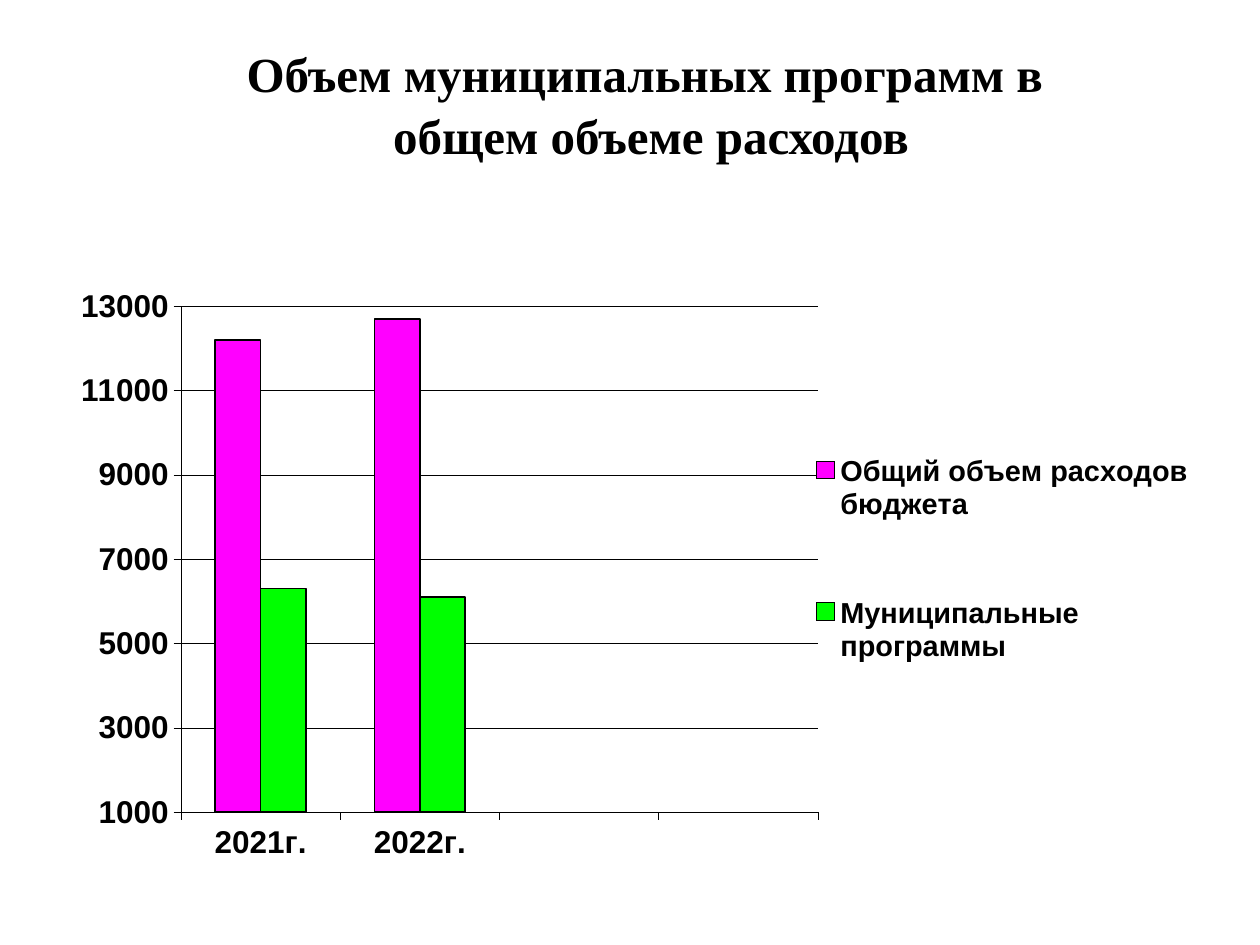
from dataclasses import dataclass

import pptx
import pptx.chart.data
import pptx.dml.color
import pptx.enum.chart
import pptx.enum.text
import pptx.oxml
import pptx.util
from pptx.util import Pt


@dataclass(frozen=True)
class Theme:
    ink: str = "000000"
    heading_font: str = "Times New Roman"
    chart_font: str = "Arial"
    heading_size: float = 28
    axis_size: float = 18
    legend_size: float = 16.5
    hairline: float = 0.25
    outline: float = 1


@dataclass(frozen=True)
class Box:
    left: float
    top: float
    width: float
    height: float


@dataclass(frozen=True)
class Expense:
    name: str
    values: tuple
    color: str


THEME = Theme()
HEADING = ("Объем муниципальных программ в ", "общем объеме расходов")
YEARS = ("2021г.", "2022г.", "", "")
EXPENSES = (
    Expense("Общий объем расходов бюджета", (12200, 12700, None, None), "FF00FF"),
    Expense("Муниципальные программы", (6300, 6100, None, None), "00FF00"),
)
HEADING_BOX = Box(48, 18, 648, 90)
CHART_BOX = Box(46, 157.5, 638.5, 348.5)
# Fractions of the chart area
PLOT_AREA = Box(0.09, 0.05, 0.57, 0.83)
LEGEND_AREA = Box(0.65, 0.17, 0.35, 0.59)


def rgb(color: str) -> pptx.dml.color.RGBColor:
    return pptx.dml.color.RGBColor.from_string(color)


def style_font(font, name: str, size: float) -> None:
    font.name, font.size, font.bold = name, Pt(size), True
    font.color.rgb = rgb(THEME.ink)


def style_line(line, width: float) -> None:
    line.color.rgb = rgb(THEME.ink)
    line.width = Pt(width)


def set_layout(layout, area: Box, inner: bool = False) -> None:
    """Fill a c:layout element with a manual position."""
    def add(parent, tag: str, value=None):
        child = pptx.oxml.xmlchemy.OxmlElement(f"c:{tag}")
        if value is not None:
            child.set("val", str(value))
        parent.append(child)
        return child

    for old in list(layout):
        layout.remove(old)
    manual = add(layout, "manualLayout")
    if inner:
        add(manual, "layoutTarget", "inner")
    for tag, value in (("xMode", "edge"), ("yMode", "edge"),
                       ("x", area.left), ("y", area.top),
                       ("w", area.width), ("h", area.height)):
        add(manual, tag, value)


def add_heading(slide, lines: tuple, box: Box) -> None:
    heading = slide.shapes.add_textbox(
        Pt(box.left), Pt(box.top), Pt(box.width), Pt(box.height)).text_frame
    heading.word_wrap = True
    heading.margin_top = Pt(7)
    heading.text = "\n".join(lines)
    for line in heading.paragraphs:
        line.alignment = pptx.enum.text.PP_ALIGN.CENTER
        line.space_after = Pt(1.5)
        style_font(line.font, THEME.heading_font, THEME.heading_size)


def style_axis(axis) -> None:
    style_font(axis.tick_labels.font, THEME.chart_font, THEME.axis_size)
    style_line(axis.format.line, THEME.hairline)
    axis.major_tick_mark = pptx.enum.chart.XL_TICK_MARK.OUTSIDE
    axis.tick_label_position = pptx.enum.chart.XL_TICK_LABEL_POSITION.LOW


def add_expense_chart(slide, box: Box) -> None:
    data = pptx.chart.data.CategoryChartData(number_format="General")
    data.categories = YEARS
    for expense in EXPENSES:
        data.add_series(expense.name, expense.values)
    chart = slide.shapes.add_chart(
        pptx.enum.chart.XL_CHART_TYPE.COLUMN_CLUSTERED,
        Pt(box.left), Pt(box.top), Pt(box.width), Pt(box.height), data).chart
    chart.has_title = False
    style_font(chart.font, THEME.chart_font, THEME.axis_size)

    # Columns
    columns = chart.plots[0]
    columns.vary_by_categories = False
    columns.gap_width, columns.overlap = 150, 0
    for series, expense in zip(columns.series, EXPENSES):
        series.format.fill.solid()
        series.format.fill.fore_color.rgb = rgb(expense.color)
        style_line(series.format.line, THEME.outline)

    # Axes
    for axis in (chart.category_axis, chart.value_axis):
        style_axis(axis)
    amounts = chart.value_axis
    amounts.minimum_scale, amounts.maximum_scale = 1000, 13000
    amounts.major_unit = 2000
    amounts.has_major_gridlines = True
    style_line(amounts.major_gridlines.format.line, THEME.hairline)

    # Legend and manual layout
    chart.has_legend = True
    legend = chart.legend
    legend.position = pptx.enum.chart.XL_LEGEND_POSITION.RIGHT
    legend.include_in_layout = False
    style_font(legend.font, THEME.chart_font, THEME.legend_size)
    plot_area = chart.element.chart.plotArea
    layouts = plot_area.xpath("c:layout")
    if not layouts:
        layouts = [pptx.oxml.xmlchemy.OxmlElement("c:layout")]
        plot_area.insert(0, layouts[0])
    set_layout(layouts[0], PLOT_AREA, inner=True)
    legend_layouts = legend._element.xpath("c:layout")
    if not legend_layouts:
        legend_layouts = [pptx.oxml.xmlchemy.OxmlElement("c:layout")]
        legend._element.xpath("c:legendPos")[0].addnext(legend_layouts[0])
    set_layout(legend_layouts[0], LEGEND_AREA)


def main() -> None:
    deck = pptx.Presentation()
    deck.slide_width, deck.slide_height = Pt(720), Pt(540)
    slide = deck.slides.add_slide(deck.slide_layouts[6])
    add_heading(slide, HEADING, HEADING_BOX)
    add_expense_chart(slide, CHART_BOX)
    deck.save("out.pptx")


if __name__ == "__main__":
    main()
